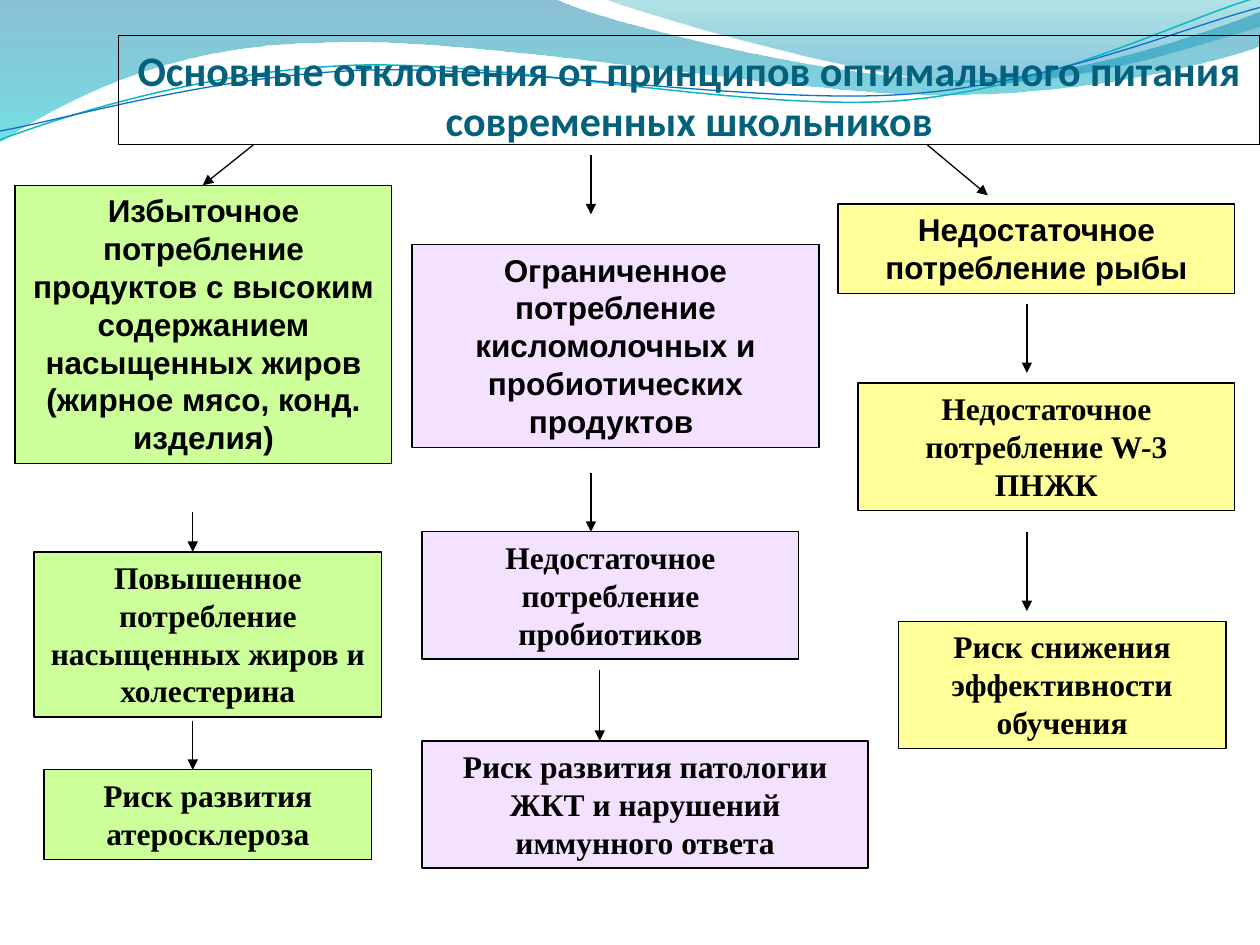
"""Build a flow chart slide on departures from healthy eating among schoolchildren."""
from math import cos, radians, sin
from lxml import etree
from pptx import Presentation
from pptx.dml.color import RGBColor
from pptx.enum.shapes import MSO_CONNECTOR
from pptx.enum.text import MSO_ANCHOR, MSO_AUTO_SIZE, PP_ALIGN
from pptx.oxml.ns import qn
from pptx.util import Inches, Pt

CENTER = PP_ALIGN.CENTER
BOTTOM = MSO_ANCHOR.BOTTOM
FIXED, GROW = MSO_AUTO_SIZE.NONE, MSO_AUTO_SIZE.SHAPE_TO_FIT_TEXT
STRAIGHT = MSO_CONNECTOR.STRAIGHT
TILT = 2.7
GREEN, LILAC, YELLOW = "CCFF99", "F3E1FF", "FFFF99"
ARIAL, TIMES = "Arial", "Times New Roman"

paint = RGBColor.from_string


def trace(shapes, start, parts, close):
    """Draw an outline of straight (one point) and cubic (three points) parts."""
    dots = [dot for part in parts for dot in part]
    pen = shapes.build_freeform(Inches(start[0]), Inches(start[1]), scale=1.0)
    pen.add_line_segments([(Inches(x), Inches(y)) for x, y in dots], close=close)
    shape = pen.convert_to_shape()
    shape.shadow.inherit = False
    lines = iter(list(shape._element.spPr.iter(qn("a:lnTo"))))
    for part in parts:
        nodes = [next(lines) for _ in part]
        if len(part) == 3:
            nodes[0].tag = qn("a:cubicBezTo")
            for node in nodes[1:]:
                nodes[0].append(node[0])
                node.getparent().remove(node)
    return shape


def write(frame, text, font, size, color):
    """Put one centred bold run in a text frame."""
    frame.word_wrap = True
    para = frame.paragraphs[0]
    para.alignment = CENTER
    run = para.add_run()
    run.text = text
    run.font.name, run.font.size, run.font.bold = font, Pt(size), True
    run.font.color.rgb = paint(color)


deck = Presentation()
deck.slide_width, deck.slide_height = Inches(10), Inches(7.5)
slide = deck.slides.add_slide(deck.slide_layouts[5])

waves = [
    ((0, -0.01), [[(4.4, -0.01)], [(4.76, 0.17), (6.64, 0.63), (7.58, 0.63)],
                  [(8.53, 0.63), (9.58, 0.26), (10, 0.09)], [(10.01, 0.36)],
                  [(9.83, 0.44), (8.7, 0.76), (7.46, 0.75)],
                  [(6.22, 0.75), (3.82, 0.28), (2.57, 0.34)],
                  [(1.29, 0.35), (0.46, 0.83), (-0.01, 1.13)], [(0, -0.01)]],
     [(0, "0074A1", 45), (1, "00C6CF", 55)]),
    ((4.79, -0.01), [[(5.09, 0.11), (6.82, 0.62), (7.69, 0.65)],
                     [(8.56, 0.69), (9.61, 0.32), (10, 0.21)], [(10, 0)], [(4.79, -0.01)]],
     [(0, "00A1A9", 30), (0.8, "008BBF", 45)]),
]
for start, parts, stops in waves:
    wave = trace(slide.shapes, start, parts, True)
    wave.fill.gradient()
    wave.fill.gradient_angle = 270
    for stop, (place, color, _) in zip(wave.fill.gradient_stops, stops):
        stop.position = place
        stop.color.rgb = paint(color)
    for node, (_, _, alpha) in zip(wave._element.spPr.iter(qn("a:srgbClr")), stops):
        etree.SubElement(node, qn("a:alpha"), val=str(alpha * 1000))
    wave.line.fill.background()

curves = [
    ([(0, 1.11), (0.48, 0.93), (1.58, 0.57), (2.77, 0.52), (3.95, 0.47), (5.93, 0.89),
      (7.13, 0.8), (8.33, 0.71), (9.38, 0.15), (9.98, -0.02)], 0.58, "0AB8BF", 0.85),
    ([(0, 1.04), (0.47, 0.96), (1.64, 0.61), (2.83, 0.56), (4.03, 0.51), (5.97, 0.83),
      (7.17, 0.75), (8.36, 0.67), (9.41, 0.21), (10, 0.06)], 0.59, "0F6FC6", 0.75),
]
group = slide.shapes.add_group_shape()
turn = radians(TILT)
for dots, mid, color, width in curves:
    flat = [(5 + (x - 5) * cos(turn) - (y - mid) * sin(turn),
             mid + (x - 5) * sin(turn) + (y - mid) * cos(turn)) for x, y in dots]
    curve = trace(group.shapes, flat[0], [flat[i:i + 3] for i in (1, 4, 7)], False)
    curve.rotation = 360 - TILT
    curve.fill.background()
    curve.line.color.rgb = paint(color)
    curve.line.width = Pt(width)

title = slide.shapes.title
slide.shapes._spTree.append(title._element)
title.left, title.top = Inches(0.94), Inches(0.28)
title.width, title.height = Inches(9.06), Inches(0.87)
title.line.color.rgb = paint("000000")
title.line.width = Pt(0.75)
frame = title.text_frame
frame.auto_size, frame.vertical_anchor = FIXED, BOTTOM
frame.margin_left = frame.margin_right = frame.margin_bottom = 0
frame.margin_top = Inches(0.05)
write(frame, "Основные отклонения от принципов оптимального питания современных школьников",
      "Calibri", 24, "04617B")

boxes = [
    (0.12, 1.47, 2.99, 2.21, GREEN, ARIAL, "Избыточное потребление продуктов с высоким "
     "содержанием насыщенных жиров (жирное мясо, конд. изделия)"),
    (0.35, 6.11, 2.6, 0.71, GREEN, TIMES, "Риск развития атеросклероза"),
    (6.65, 1.62, 3.15, 0.71, YELLOW, ARIAL, "Недостаточное потребление рыбы"),
    (3.27, 1.94, 3.23, 1.61, LILAC, ARIAL,
     "Ограниченное потребление кисломолочных и пробиотических продуктов "),
    (7.13, 4.93, 2.6, 1.01, YELLOW, TIMES, "Риск снижения эффективности обучения"),
    (6.81, 3.04, 2.99, 1.01, YELLOW, TIMES, "Недостаточное потребление W-3 ПНЖК"),
    (3.35, 5.88, 3.54, 1.01, LILAC, TIMES,
     "Риск развития патологии ЖКТ и нарушений иммунного ответа"),
    (0.27, 4.38, 2.76, 1.31, GREEN, TIMES,
     "Повышенное потребление насыщенных жиров и холестерина"),
    (3.35, 4.22, 2.99, 1.01, LILAC, TIMES, "Недостаточное потребление пробиотиков"),
]
for left, top, width, height, color, font, text in boxes:
    box = slide.shapes.add_textbox(Inches(left), Inches(top), Inches(width), Inches(height))
    box.fill.solid()
    box.fill.fore_color.rgb = paint(color)
    box.line.color.rgb = paint("000000")
    box.line.width = Pt(0.75)
    box.text_frame.auto_size = GROW
    write(box.text_frame, text, font, 18, "000000")

arrows = [
    (2.01, 1.15, 1.61, 1.47), (4.69, 3.75, 4.69, 4.22), (4.69, 1.23, 4.69, 1.7),
    (7.36, 1.15, 7.84, 1.55), (8.15, 2.41, 8.15, 2.96), (4.76, 5.32, 4.76, 5.88),
    (1.53, 5.72, 1.53, 6.11), (8.15, 4.22, 8.15, 4.85), (1.53, 4.06, 1.53, 4.38),
]
for ends in arrows:
    arrow = slide.shapes.add_connector(STRAIGHT, *map(Inches, ends))
    arrow.line.color.rgb = paint("000000")
    arrow.line.width = Pt(0.75)
    etree.SubElement(arrow.line._get_or_add_ln(), qn("a:tailEnd"), type="triangle")
    etree.SubElement(arrow._element.spPr, qn("a:effectLst"))

deck.save("out.pptx")
